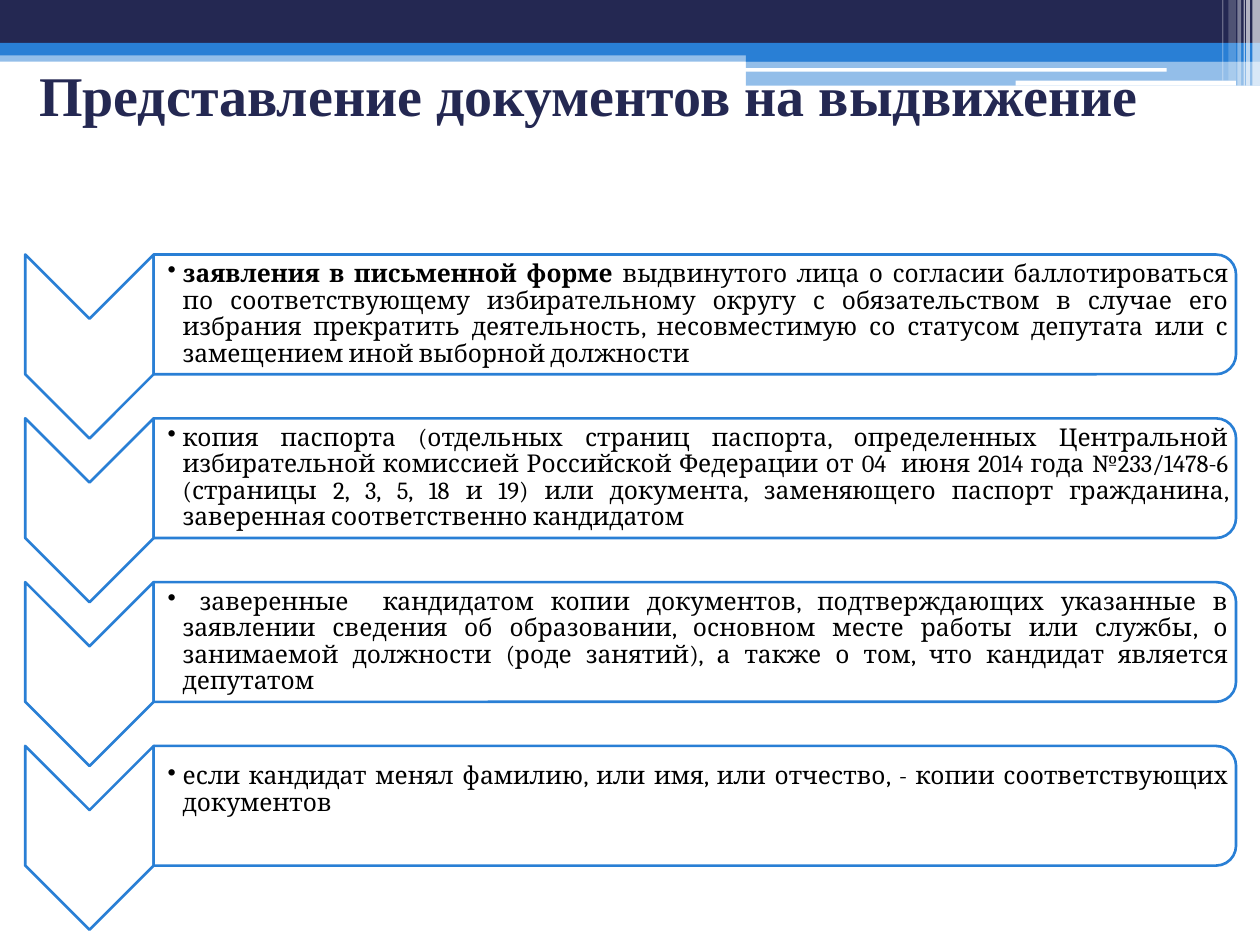
import lxml.etree
import pptx
import pptx.dml.color
import pptx.enum.shapes
import pptx.enum.text
import pptx.oxml.ns
import pptx.util

Inches = pptx.util.Inches
Pt = pptx.util.Pt
SHAPE = pptx.enum.shapes.MSO_SHAPE
ALIGN = pptx.enum.text.PP_ALIGN
ANCHOR = pptx.enum.text.MSO_ANCHOR
AUTO = pptx.enum.text.MSO_AUTO_SIZE
qn = pptx.oxml.ns.qn

NAVY, BLUE, WHITE, BLACK = "242852", "297FD5", "FFFFFF", "000000"

BANNER = [
    (0, 0.4, 10, 0.09, BLUE, 50),
    (0, 0, 10, 0.34, NAVY, 100),
    (0, 0.34, 10, 0.1, BLUE, 100),
    (5.92, 0.39, 4.08, 0.1, BLUE, 100),
    (5.92, 0.48, 4.08, 0.2, BLUE, 50),
    (5.91, 0.54, 3.35, 0.03, WHITE, 100),
    (8.06, 0.64, 1.75, 0.04, WHITE, 100),
    (9.94, 0, 0.06, 0.68, WHITE, 65),
    (9.89, 0, 0.03, 0.68, WHITE, 65),
    (9.87, 0, 0.01, 0.68, WHITE, 60),
    (9.82, 0, 0.03, 0.68, WHITE, 40),
    (9.75, 0, 0.06, 0.64, WHITE, 20),
    (9.7, 0, 0.01, 0.64, WHITE, 30),
]

DOCUMENTS = [
    [("заявления в письменной форме ", True),
     ("выдвинутого лица о согласии баллотироваться по соответствующему "
      "избирательному округу с обязательством в случае его избрания прекратить "
      "деятельность, несовместимую со статусом депутата или с замещением иной "
      "выборной должности", False)],
    [("копия паспорта (отдельных страниц паспорта, определенных Центральной "
      "избирательной комиссией Российской Федерации от 04  июня 2014 года "
      "№233/1478-6 (страницы 2, 3, 5, 18 и 19) или документа, заменяющего "
      "паспорт гражданина, заверенная соответственно кандидатом", False)],
    [(" заверенные  кандидатом копии документов, подтверждающих указанные в "
      "заявлении сведения об образовании, основном месте работы или службы, о "
      "занимаемой должности (роде занятий), а также о том, что кандидат "
      "является депутатом", False)],
    [("если кандидат менял фамилию, или имя, или отчество, - копии "
      "соответствующих документов", False)],
]
BOTTOM_INSETS = [0.01, 0.01, 0.01, 0.26]


def rgb(value):
    return pptx.dml.color.RGBColor.from_string(value)


def apply(obj, values):
    for name, value in values.items():
        setattr(obj, name, value)


def add_run(p, text, color, **font):
    r = p.add_run()
    r.text = text
    apply(r.font, font)
    r.font.color.rgb = rgb(color)


def add_shape(slide, kind, x, y, w, h, fill, alpha=100, line=None):
    sp = slide.shapes.add_shape(kind, Inches(x), Inches(y), Inches(w), Inches(h))
    sp.shadow.inherit = False
    sp.fill.solid()
    sp.fill.fore_color.rgb = rgb(fill)
    if alpha < 100:
        clr = sp._element.spPr.find(qn("a:solidFill"))[0]
        lxml.etree.SubElement(clr, qn("a:alpha"), val=str(alpha * 1000))
    if line:
        sp.line.color.rgb = rgb(line)
        sp.line.width = Pt(1.5)
    else:
        sp.line.fill.background()
    return sp


def add_turned(slide, kind, x, y, w, h):
    sp = add_shape(slide, kind, x + (w - h) / 2, y + (h - w) / 2, h, w,
                   WHITE, line=BLUE)
    sp.rotation = 90


def add_banner(slide):
    for x, y, w, h, color, alpha in BANNER:
        add_shape(slide, SHAPE.RECTANGLE, x, y, w, h, color, alpha)


def add_title(slide, x, y, w, h):
    sp = slide.shapes.title
    apply(sp, {"left": Inches(x), "top": Inches(y),
               "width": Inches(w), "height": Inches(h)})
    tf = sp.text_frame
    apply(tf, {"auto_size": AUTO.NONE, "vertical_anchor": ANCHOR.MIDDLE,
               "word_wrap": True})
    p = tf.paragraphs[0]
    p.alignment = ALIGN.LEFT
    add_run(p, "Представление документов на выдвижение", NAVY,
            name="Times New Roman", size=Pt(32), bold=True)
    slide.shapes._spTree.append(sp._element)


def add_bullet(p, indent):
    pPr = p._p.get_or_add_pPr()
    pPr.set("marL", str(Inches(indent)))
    pPr.set("indent", str(-Inches(indent)))
    lxml.etree.SubElement(pPr, qn("a:buChar"), char="•")


def add_document(slide, x, y, w, h, runs, bottom):
    arrow_w, arrow_h, pad = 1.02, 1.46, 0.05
    panel_x, panel_w = x + arrow_w, w - arrow_w
    add_turned(slide, SHAPE.CHEVRON, x, y, arrow_w, arrow_h)
    add_turned(slide, SHAPE.ROUND_2_SAME_RECTANGLE, panel_x, y, panel_w, h)
    tb = slide.shapes.add_textbox(Inches(panel_x), Inches(y + pad),
                                  Inches(panel_w - pad), Inches(h - 2 * pad))
    tf = tb.text_frame
    apply(tf, {"word_wrap": True, "vertical_anchor": ANCHOR.MIDDLE,
               "margin_left": Inches(0.11), "margin_top": Inches(0.01),
               "margin_right": Inches(0.01), "margin_bottom": Inches(bottom)})
    p = tf.paragraphs[0]
    apply(p, {"alignment": ALIGN.JUSTIFY, "line_spacing": 0.9})
    add_bullet(p, 0.12)
    for text, bold in runs:
        add_run(p, text, BLACK, name="Cambria", size=Pt(14), bold=bold)


def add_documents(slide, x, y, w, h, pitch):
    for i, (runs, bottom) in enumerate(zip(DOCUMENTS, BOTTOM_INSETS)):
        add_document(slide, x, y + i * pitch, w, h, runs, bottom)


def main():
    prs = pptx.Presentation()
    apply(prs, {"slide_width": Inches(10), "slide_height": Inches(7.5)})
    slide = prs.slides.add_slide(prs.slide_layouts[5])
    add_banner(slide)
    add_title(slide, 0.21, 0.31, 9.21, 0.87)
    add_documents(slide, 0.2, 2.02, 9.61, 0.95, 1.3)
    prs.save("out.pptx")


if __name__ == "__main__":
    main()
